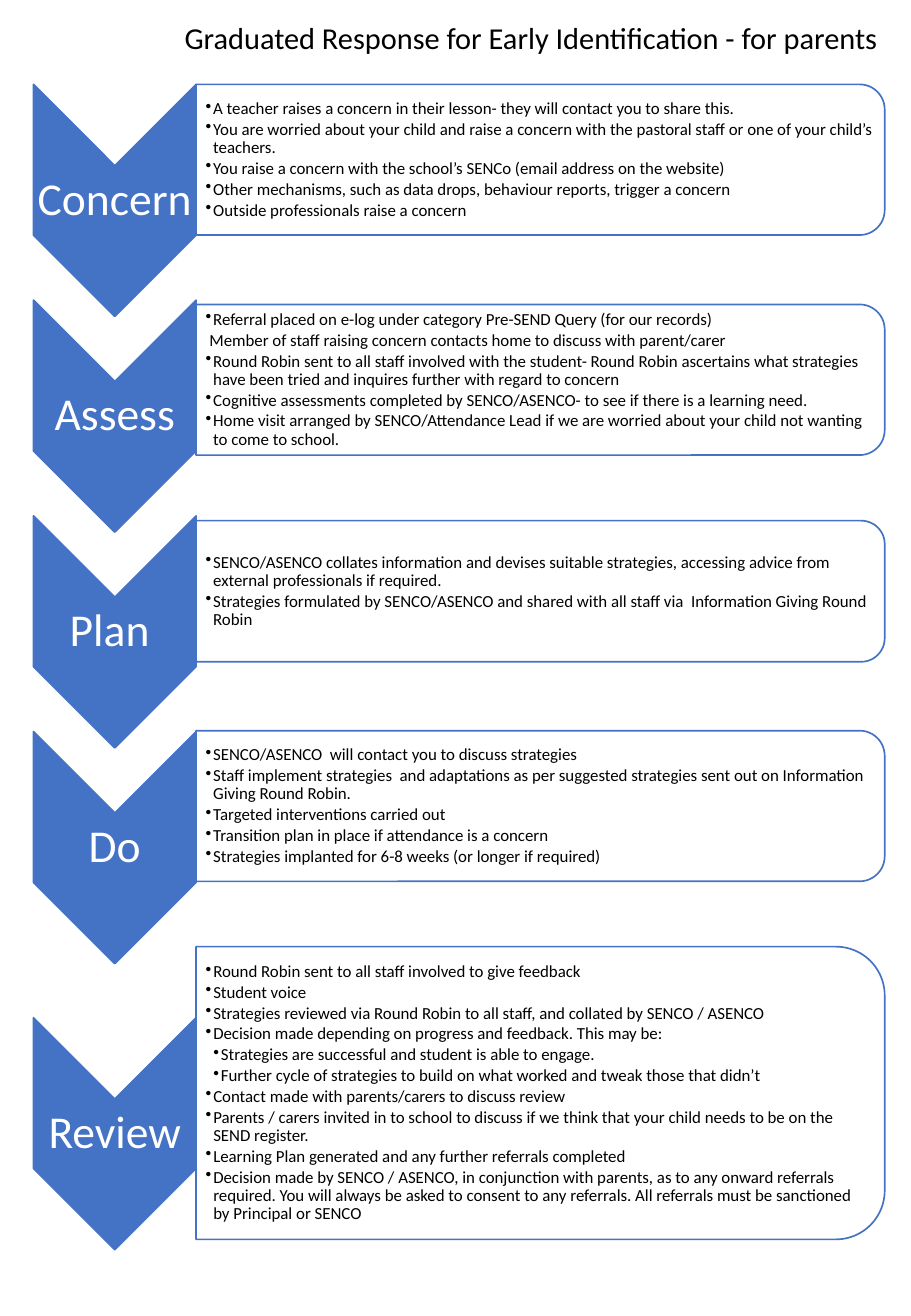
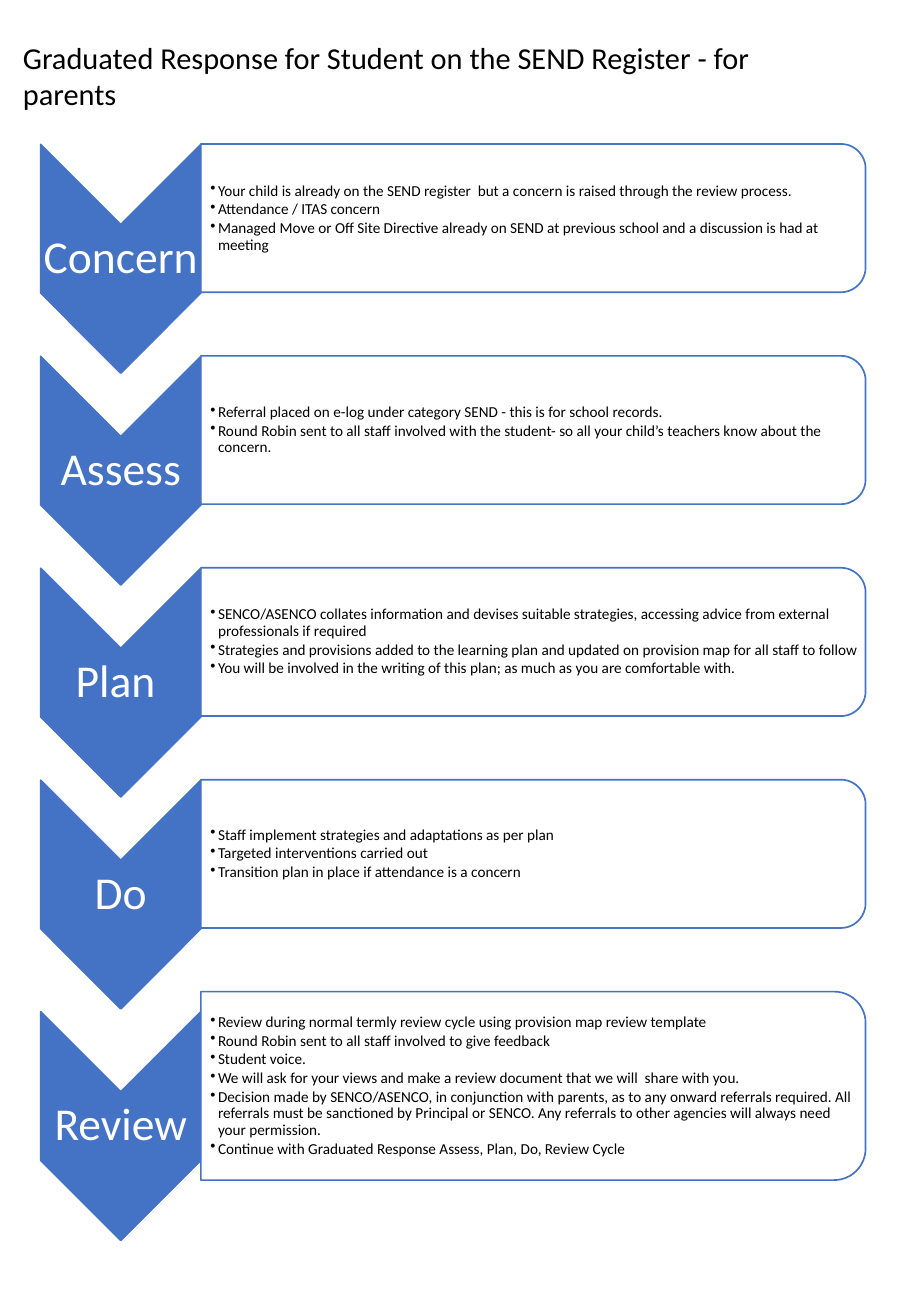
"""Build two pages showing the graduated response cycle for parents."""
from lxml import etree
from pptx import Presentation
from pptx.dml.color import RGBColor
from pptx.enum.shapes import MSO_SHAPE
from pptx.enum.text import MSO_ANCHOR, PP_ALIGN
from pptx.oxml.ns import qn
from pptx.util import Cm, Pt

CHEVRON = MSO_SHAPE.CHEVRON
PANEL = MSO_SHAPE.ROUND_2_SAME_RECTANGLE
MIDDLE = MSO_ANCHOR.MIDDLE
CENTER = PP_ALIGN.CENTER
COLORS = {"blue": "4472C4", "white": "FFFFFF", "black": "000000"}
FONT = "Calibri"
CORNER = 0.0488
HANG = 0.16

PAGES = [
    {
        "title": "Graduated Response for Early Identification - for parents",
        "place": (3.61, 0.28, 15.19, 1.8),
        "left": 0.7, "wide": 3.4, "tall": 4.85, "span": 14.4, "size": 10,
        "steps": [
            ("Concern", 4.19, 3.34, 3.15, [
                "A teacher raises a concern in their lesson- they will contact you to share this.",
                "You are worried about your child and raise a concern with the pastoral staff "
                "or one of your child’s teachers.",
                "You raise a concern with the school’s SENCo (email address on the website)",
                "Other mechanisms, such as data drops, behaviour reports, trigger a concern",
                "Outside professionals raise a concern",
            ]),
            ("Assess", 8.7, 7.94, 3.15, [
                "Referral placed on e-log under category Pre-SEND Query (for our records)",
                " Member of staff raising concern contacts home to discuss with parent/carer",
                "Round Robin sent to all staff involved with the student- Round Robin ascertains "
                "what strategies have been tried and inquires further with regard to concern",
                "Cognitive assessments completed by SENCO/ASENCO- to see if there is a learning need.",
                "Home visit arranged by SENCO/Attendance Lead if we are worried about your child "
                "not wanting to come to school.",
            ]),
            ("Plan ", 13.21, 12.36, 2.95, [
                "SENCO/ASENCO collates information and devises suitable strategies, accessing "
                "advice from external professionals if required.",
                "Strategies formulated by SENCO/ASENCO and shared with all staff via  "
                "Information Giving Round Robin",
            ]),
            ("Do", 17.72, 16.85, 3.15, [
                "SENCO/ASENCO  will contact you to discuss strategies",
                "Staff implement strategies  and adaptations as per suggested strategies sent "
                "out on Information Giving Round Robin.",
                "Targeted interventions carried out",
                "Transition plan in place if attendance is a concern",
                "Strategies implanted for 6-8 weeks (or longer if required)",
            ]),
            ("Review", 23.7, 22.85, 6.12, [
                "Round Robin sent to all staff involved to give feedback",
                "Student voice",
                "Strategies reviewed via Round Robin to all staff, and collated by SENCO / ASENCO",
                "Decision made depending on progress and feedback. This may be:",
                "\tStrategies are successful and student is able to engage.",
                "\tFurther cycle of strategies to build on what worked and tweak those that didn’t",
                "Contact made with parents/carers to discuss review",
                "Parents / carers invited in to school to discuss if we think that your child "
                "needs to be on the SEND register.",
                "Learning Plan generated and any further referrals completed",
                "Decision made by SENCO / ASENCO, in conjunction with parents, as to any onward "
                "referrals required. You will always be asked to consent to any referrals. "
                "All referrals must be sanctioned by Principal or SENCO",
            ]),
        ],
    },
    {
        "title": "Graduated Response for Student on the SEND Register - for parents",
        "place": (0.23, 0.69, 17.25, 1.8),
        "left": 0.85, "wide": 3.35, "tall": 4.78, "span": 13.9, "size": 9,
        "steps": [
            ("Concern", 5.41, 4.56, 3.1, [
                "Your child is already on the SEND register  but a concern is raised through "
                "the review process.",
                "Attendance / ITAS concern",
                "Managed Move or Off Site Directive already on SEND at previous school and a "
                "discussion is had at meeting",
            ]),
            ("Assess", 9.84, 8.99, 3.1, [
                "Referral placed on e-log under category SEND - this is for school records.",
                "Round Robin sent to all staff involved with the student- so all your child’s "
                "teachers know about the concern.",
            ]),
            ("Plan ", 14.27, 13.42, 3.1, [
                "SENCO/ASENCO collates information and devises suitable strategies, accessing "
                "advice from external professionals if required",
                "Strategies and provisions added to the learning plan and updated on provision "
                "map for all staff to follow",
                "You will be involved in the writing of this plan; as much as you are "
                "comfortable with.",
            ]),
            ("Do", 18.7, 17.85, 3.1, [
                "Staff implement strategies and adaptations as per plan",
                "Targeted interventions carried out",
                "Transition plan in place if attendance is a concern",
            ]),
            ("Review", 23.54, 22.7, 3.94, [
                "Review during normal termly review cycle using provision map review template",
                "Round Robin sent to all staff involved to give feedback",
                "Student voice.",
                "We will ask for your views and make a review document that we will  share with you.",
                "Decision made by SENCO/ASENCO, in conjunction with parents, as to any onward "
                "referrals required. All referrals must be sanctioned by Principal or SENCO. "
                "Any referrals to other agencies will always need your permission.",
                "Continue with Graduated Response Assess, Plan, Do, Review Cycle",
            ]),
        ],
    },
]


def add_turned(slide, kind, left, mid, wide, tall, fill):
    shape = slide.shapes.add_shape(
        kind, Cm(left + (wide - tall) / 2), Cm(mid - wide / 2), Cm(tall), Cm(wide))
    shape.rotation = 90
    shape.shadow.inherit = False
    shape.fill.solid()
    shape.fill.fore_color.rgb = RGBColor.from_string(COLORS[fill])
    shape.line.color.rgb = RGBColor.from_string(COLORS["blue"])
    shape.line.width = Pt(1)
    return shape


def add_text(slide, place, lines, size, color, pads=None):
    box = slide.shapes.add_textbox(*[Cm(n) for n in place])
    frame = box.text_frame
    frame.word_wrap = True
    if pads:
        frame.vertical_anchor = MIDDLE
        frame.margin_left = Cm(pads[0])
        frame.margin_top = frame.margin_right = frame.margin_bottom = Cm(pads[1])
    frame.text = "\n".join(lines)
    for para in frame.paragraphs:
        if pads:
            para.line_spacing = 0.9
        for run in para.runs:
            run.font.size = Pt(size)
            run.font.name = FONT
            run.font.color.rgb = RGBColor.from_string(COLORS[color])
    return frame


deck = Presentation()
deck.slide_width, deck.slide_height = Cm(19.05), Cm(27.51)

for page in PAGES:
    slide = deck.slides.add_slide(deck.slide_layouts[6])
    left, wide, tall = page["left"], page["wide"], page["tall"]
    span, size = page["span"], page["size"]
    edge = left + wide
    add_text(slide, page["place"], [page["title"]], 18, "black")

    for label, mid, center, high, points in page["steps"]:
        add_turned(slide, CHEVRON, left, mid, wide, tall, "blue")
        gap = tall - wide
        frame = add_text(slide, (left, mid - gap / 2, wide, gap), [label], 27, "white",
                         (0.05, 0.05))
        frame.paragraphs[0].alignment = CENTER

        panel = add_turned(slide, PANEL, edge, center, span, high, "white")
        tint = panel.fill._xPr.find(qn("a:solidFill"))[0]
        etree.SubElement(tint, qn("a:alpha"), val="90000")

        inset = high * CORNER
        place = (edge, center - high / 2 + inset, span - inset, high - 2 * inset)
        frame = add_text(slide, place, [point.strip() for point in points], size, "black",
                         (0.2, 0.03))
        for para, point in zip(frame.paragraphs, points):
            plain, sub = point.startswith(" "), point.startswith("\t")
            para.level = 2 if sub else 1
            para.space_after = Pt(size * 0.15)
            props = para._p.get_or_add_pPr()
            props.set("marL", str(Cm(HANG * para.level)))
            props.set("indent", str(-Cm(HANG / 2 if plain else HANG)))
            if plain:
                etree.SubElement(props, qn("a:buNone"))
            else:
                etree.SubElement(props, qn("a:buChar"), char="•")

deck.save("out.pptx")
